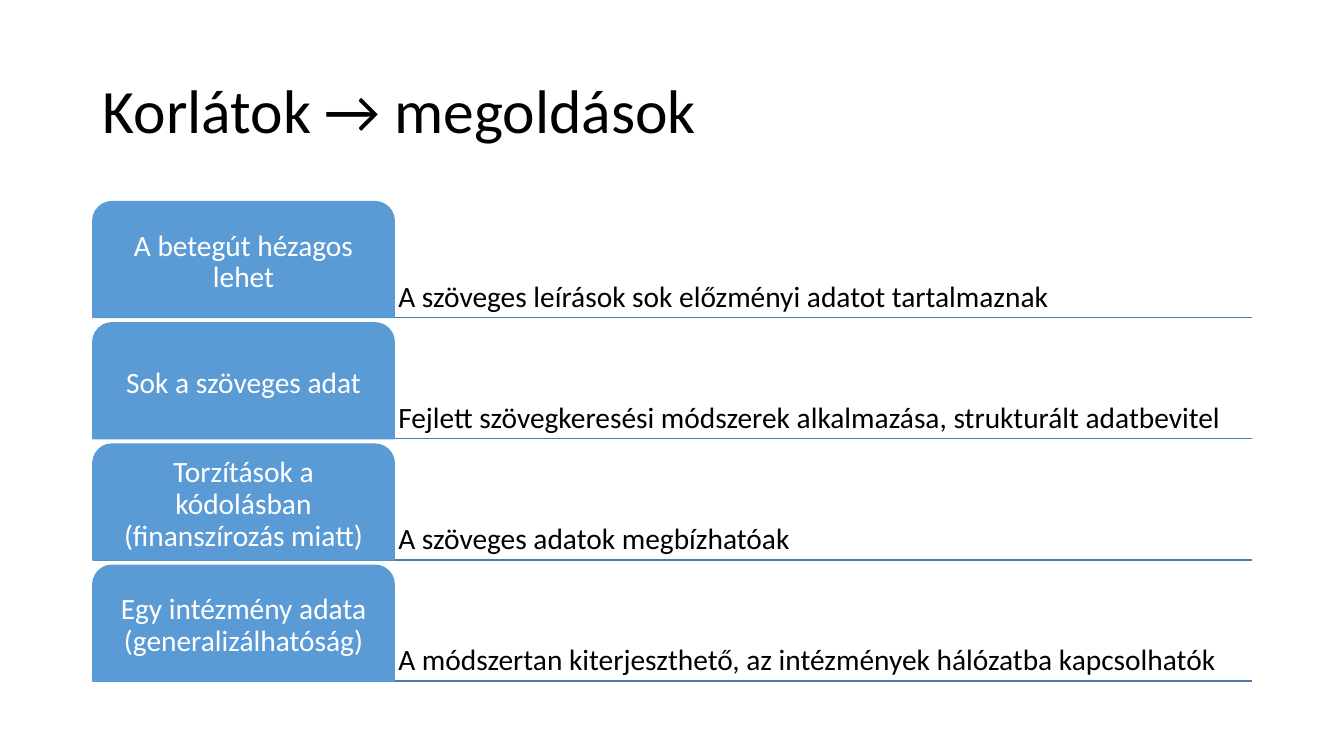
import pptx
import pptx.util
import pptx.dml.color
import pptx.enum.shapes
import pptx.enum.text
import pptx.oxml.ns
from lxml import etree

Inches = pptx.util.Inches
Pt = pptx.util.Pt
RGBColor = pptx.dml.color.RGBColor
ANCHOR = pptx.enum.text.MSO_ANCHOR
ALIGN = pptx.enum.text.PP_ALIGN

BLACK = RGBColor(0x00, 0x00, 0x00)
WHITE = RGBColor(0xFF, 0xFF, 0xFF)
TAB_BLUE = RGBColor(0x5B, 0x9B, 0xD5)
RULE_BLUE = RGBColor(0x49, 0x7C, 0xAB)

TITLE = "Korlátok → megoldások"
LIMITS = [
    ("A betegút hézagos lehet",
     "A szöveges leírások sok előzményi adatot tartalmaznak"),
    ("Sok a szöveges adat",
     "Fejlett szövegkeresési módszerek alkalmazása, strukturált adatbevitel"),
    ("Torzítások a kódolásban (finanszírozás miatt)",
     "A szöveges adatok megbízhatóak"),
    ("Egy intézmény adata (generalizálhatóság)",
     "A módszertan kiterjeszthető, az intézmények hálózatba kapcsolhatók"),
]
TAB_WIDTH = 2.99
ROW_HEIGHT = 1.15
ROW_PITCH = 1.2025


def set_text(box, text, size, color, anchor, align=ALIGN.LEFT, inset=None):
    frame = box.text_frame
    frame.word_wrap = True
    frame.vertical_anchor = anchor
    if inset is not None:
        for side in ("left", "top", "right", "bottom"):
            setattr(frame, "margin_" + side, Inches(inset))
    para = frame.paragraphs[0]
    para.alignment = align
    para.line_spacing = 0.9
    span = para.add_run()
    span.text = text
    span.font.color.rgb = color
    for name, value in {"name": "Calibri", "size": Pt(size)}.items():
        setattr(span.font, name, value)


def add_title(page, left, top, width, height):
    box = page.shapes.add_textbox(*map(Inches, (left, top, width, height)))
    set_text(box, TITLE, 44, BLACK, ANCHOR.MIDDLE)


def add_limit_row(page, left, top, width, limit, solution):
    # Rule under the row
    bottom = top + ROW_HEIGHT
    rule = page.shapes.add_connector(
        pptx.enum.shapes.MSO_CONNECTOR.STRAIGHT,
        *map(Inches, (left, bottom, left + width, bottom)))
    rule.line.color.rgb = RULE_BLUE
    rule.line.width = Pt(1)
    etree.SubElement(rule.element.spPr, pptx.oxml.ns.qn("a:effectLst"))

    # Solution beside the tab
    box = page.shapes.add_textbox(*map(Inches, (
        left + TAB_WIDTH, top, width - TAB_WIDTH, ROW_HEIGHT)))
    set_text(box, solution, 21, BLACK, ANCHOR.BOTTOM, inset=0.04)

    # Tab naming the limit
    tab = page.shapes.add_shape(
        pptx.enum.shapes.MSO_SHAPE.ROUND_2_SAME_RECTANGLE,
        *map(Inches, (left, top, TAB_WIDTH, ROW_HEIGHT)))
    tab.shadow.inherit = False
    tab.fill.solid()
    tab.fill.fore_color.rgb = TAB_BLUE
    tab.line.color.rgb = TAB_BLUE
    tab.line.width = Pt(1)
    set_text(tab, limit, 21, WHITE, ANCHOR.MIDDLE, ALIGN.CENTER, 0.04)


def add_limit_list(page, left, top, width):
    for index, (limit, solution) in enumerate(LIMITS):
        add_limit_row(page, left, top + index * ROW_PITCH, width, limit, solution)


def main():
    deck = pptx.Presentation()
    deck.slide_width = Inches(13.33)
    deck.slide_height = Inches(7.5)
    page = deck.slides.add_slide(deck.slide_layouts[6])
    add_title(page, 0.92, 0.4, 11.5, 1.45)
    add_limit_list(page, 0.92, 2, 11.5)
    deck.save("out.pptx")


if __name__ == "__main__":
    main()
